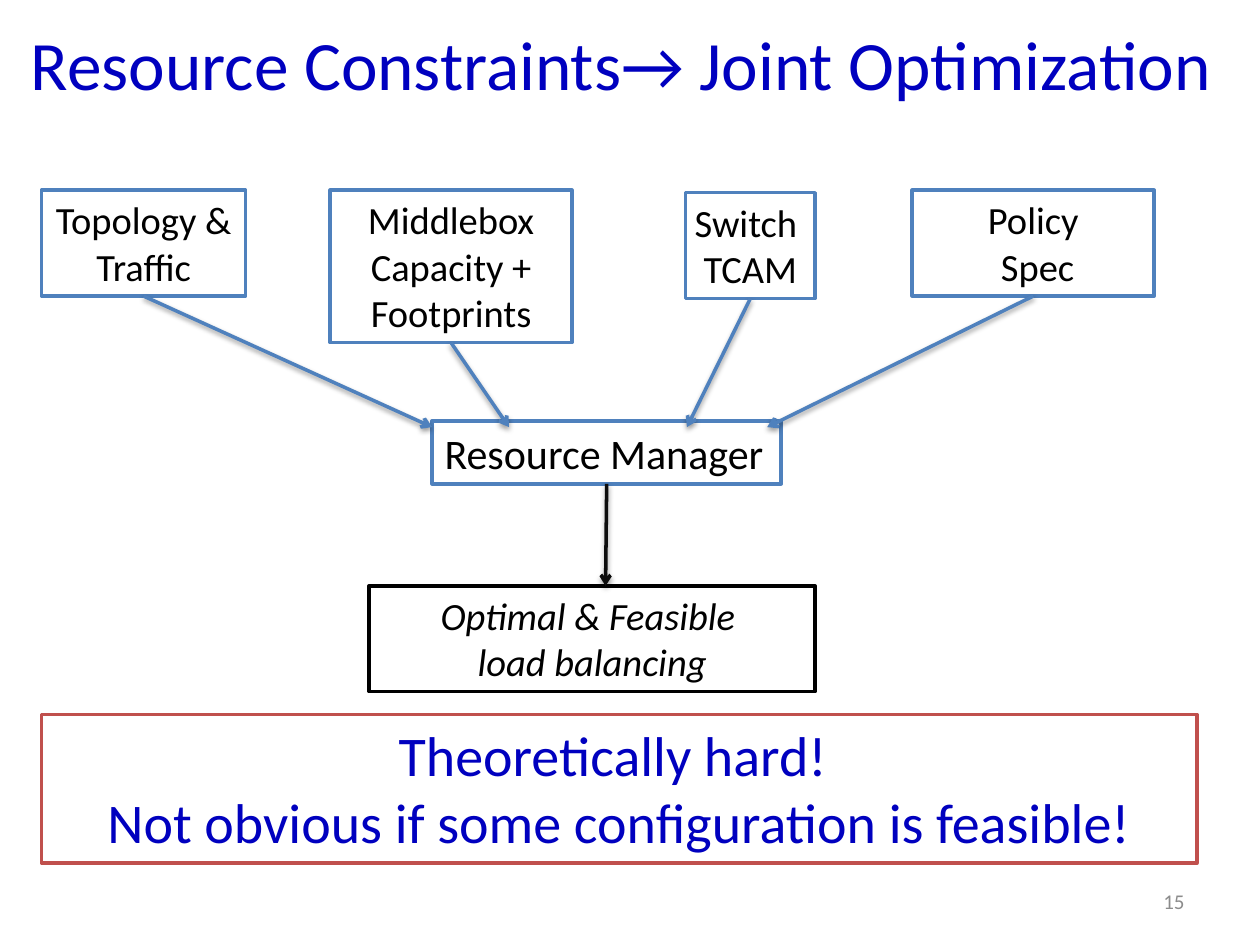
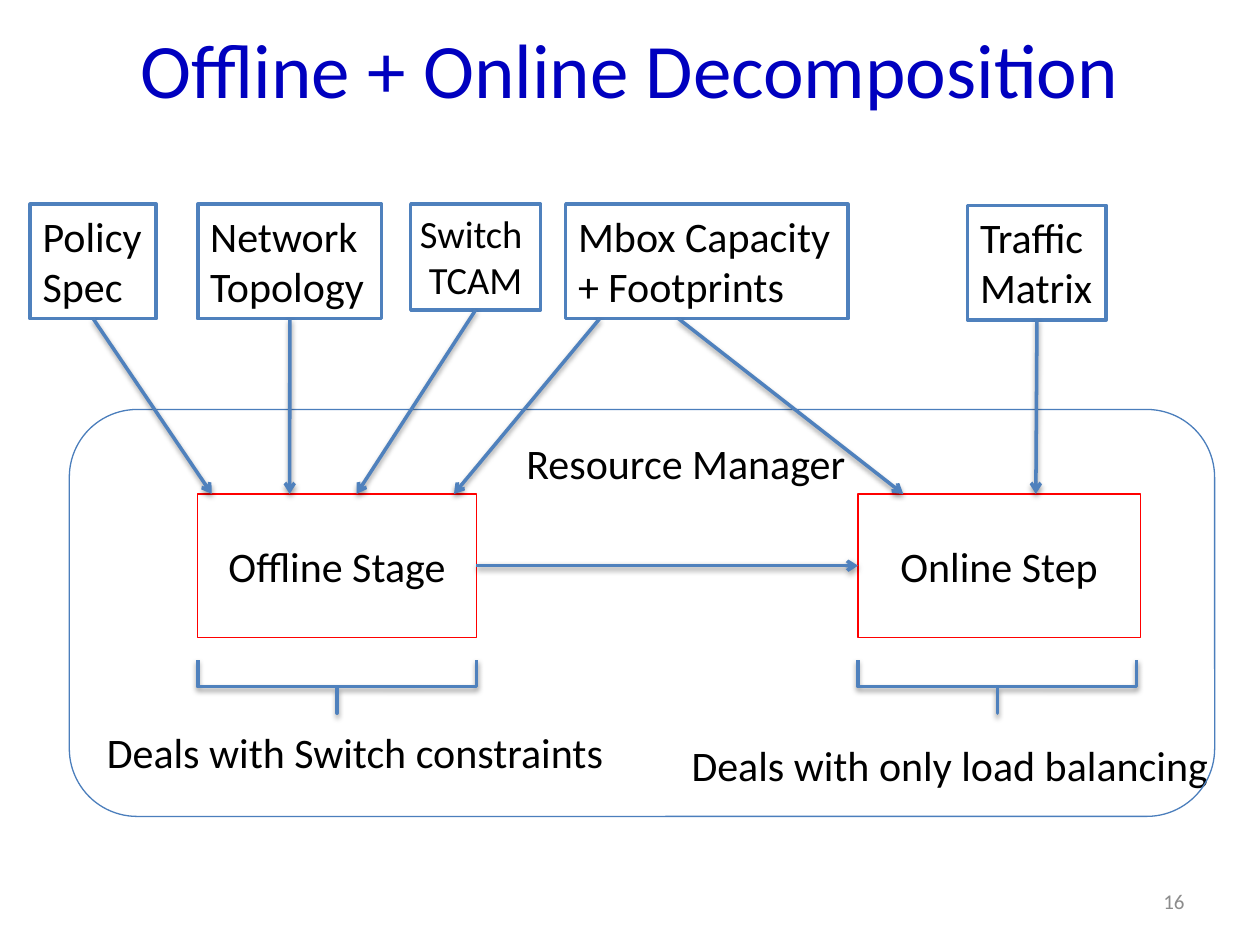
from lxml import etree
from pptx import Presentation
from pptx.dml.color import RGBColor
from pptx.enum import shapes, text
from pptx.oxml import ns
from pptx.util import Inches, Pt

COLORS = {
    "title": "0000BF", "blue": "4F81BD", "frame": "4B7EBC", "red": "FF0000",
    "brick": "C0504D", "black": "000000", "arrow": "0D0D0D", "white": "FFFFFF",
    "number": "8C8C8C",
}
FONT = "Calibri"
LEFT, CENTER, RIGHT = text.PP_ALIGN.LEFT, text.PP_ALIGN.CENTER, text.PP_ALIGN.RIGHT
TOP, MIDDLE = text.MSO_ANCHOR.TOP, text.MSO_ANCHOR.MIDDLE
SHAPE = shapes.MSO_SHAPE
BOTTOM_SITE, LEFT_SITE, RIGHT_SITE = 2, 1, 3


def color(name):
    """Return the named palette colour."""
    return RGBColor.from_string(COLORS[name])


def write(shape, content, size=24, ink="black", align=LEFT, anchor=TOP, italic=False, wrap=True):
    """Fill a shape with formatted text, one paragraph per line."""
    frame = shape.text_frame
    frame.text = content
    frame.word_wrap = wrap
    frame.vertical_anchor = anchor
    for paragraph in frame.paragraphs:
        paragraph.alignment = align
        font = paragraph.font
        for run in paragraph.runs:
            font = run.font
            font.name, font.size, font.italic = FONT, Pt(size), italic
            font.color.rgb = color(ink)


def add_outline(slide, box, kind=SHAPE.RECTANGLE, line="blue", weight=2, fill=None):
    """Add a preset shape with an outline and an optional fill."""
    shape = slide.shapes.add_shape(kind, *map(Inches, box))
    shape.shadow.inherit = False
    shape.line.color.rgb = color(line)
    shape.line.width = Pt(weight)
    if fill:
        shape.fill.solid()
        shape.fill.fore_color.rgb = color(fill)
    else:
        shape.fill.background()
    return shape


def add_box(slide, box, content, line="blue", **text_format):
    """Add a white outlined box with text."""
    shape = add_outline(slide, box, line=line, fill="white")
    write(shape, content, **text_format)
    return shape


def add_label(slide, box, content, **text_format):
    """Add free-standing text."""
    write(slide.shapes.add_textbox(*map(Inches, box)), content, **text_format)


def add_shadow(shape):
    """Give a line or brace a soft shadow that falls straight down."""
    properties = shape._element.spPr
    for effects in properties.findall(ns.qn("a:effectLst")):
        properties.remove(effects)
    effects = etree.SubElement(properties, ns.qn("a:effectLst"))
    shadow = etree.SubElement(effects, ns.qn("a:outerShdw"), blurRad=str(Pt(3.1)),
                              dist=str(Pt(1.6)), dir="5400000", rotWithShape="0")
    shade = etree.SubElement(shadow, ns.qn("a:srgbClr"), val=COLORS["black"])
    etree.SubElement(shade, ns.qn("a:alpha"), val="38000")


def point_on(shape, across, down=0):
    """Return the point at the given fractions of a shape's width and height."""
    return (shape.left + round(shape.width * across),
            shape.top + round(shape.height * down))


def add_arrow(slide, start, end, source=None, source_site=BOTTOM_SITE,
              target=None, target_site=LEFT_SITE, line="blue"):
    """Draw an arrow between two points, joined to source and target when given."""
    arrow = slide.shapes.add_connector(shapes.MSO_CONNECTOR.STRAIGHT, *start, *end)
    if source is not None:
        arrow.begin_connect(source, source_site)
    if target is not None:
        arrow.end_connect(target, target_site)
    arrow.line.color.rgb = color(line)
    arrow.line.width = Pt(2)
    etree.SubElement(arrow.line._get_or_add_ln(), ns.qn("a:tailEnd"), type="arrow")
    add_shadow(arrow)


def add_arrow_below(slide, source, end, **options):
    """Draw an arrow from the middle of a box's bottom side."""
    add_arrow(slide, point_on(source, 0.5, 1), end, source=source, **options)


def start_slide(presentation, title, box, size, number):
    """Add a titled slide with its page number."""
    slide = presentation.slides.add_slide(presentation.slide_layouts[5])
    heading = slide.shapes.title
    heading.left, heading.top, heading.width, heading.height = map(Inches, box)
    write(heading, title, size=size, ink="title", align=CENTER, anchor=MIDDLE)
    add_label(slide, (7.17, 6.95, 2.33, 0.4), str(number), size=12, ink="number",
              align=RIGHT, anchor=MIDDLE)
    return slide


def add_inputs(slide, top, inputs):
    """Place a row of input boxes, each given as left, drop, width, height, text and format."""
    return [add_box(slide, (left, top + drop, width, height), content, **text_format)
            for left, drop, width, height, content, text_format in inputs]


def add_stage(slide, box, content, note, note_box):
    """Place a stage with a brace below it and a note under the brace."""
    left, top, width, height = box
    stage = add_outline(slide, box, line="red", weight=0.75)
    write(stage, content, align=CENTER, anchor=MIDDLE)
    depth, span = 0.42, 2.21
    brace = add_outline(slide, (left + (span - depth) / 2, top + height + 0.39 - span / 2,
                                depth, span), SHAPE.RIGHT_BRACE)
    brace.adjustments[0] = 0
    brace.rotation = 90
    add_shadow(brace)
    add_label(slide, note_box, note)
    return stage


def build_constraints(presentation):
    """Build the slide on joint optimization under resource constraints."""
    slide = start_slide(presentation, "Resource Constraints→ Joint Optimization",
                        (0, 0, 9.86, 1), 39.6, 15)
    manager = add_box(slide, (3.43, 3.34, 2.77, 0.5), "Resource Manager", wrap=False)
    centered = {"size": 22, "align": CENTER}
    inputs = add_inputs(slide, 1.51, [
        (0.33, 0, 1.62, 0.84, "Topology & Traffic", centered),
        (2.62, 0, 1.92, 1.21, "Middlebox\nCapacity + Footprints", centered),
        (5.44, 0.02, 1.03, 0.84, "Switch \nTCAM", {**centered, "wrap": False}),
        (7.24, 0, 1.92, 0.84, "Policy\n Spec", centered),
    ])
    for source, across in zip(inputs, (0, 0.22, 0.73, 0.96)):
        add_arrow_below(slide, source, point_on(manager, across, 0.1))
    result = add_box(slide, (2.93, 4.65, 3.54, 0.84), "Optimal & Feasible \nload balancing",
                     line="black", italic=True, **centered)
    add_arrow_below(slide, manager, point_on(result, 0.53), line="arrow")
    add_box(slide, (0.33, 5.67, 9.17, 1.18),
            "Theoretically hard! \nNot obvious if some configuration is feasible!",
            line="brick", size=32, ink="title", align=CENTER)


def build_decomposition(presentation):
    """Build the slide that splits the manager into two stages."""
    slide = start_slide(presentation, "Offline + Online Decomposition",
                        (0.5, 0.06, 9, 0.96), 44, 16)
    offline = add_stage(slide, (1.57, 3.92, 2.21, 1.14), "Offline Stage",
                        "Deals with Switch constraints", (0.75, 5.72, 4.56, 0.5))
    online = add_stage(slide, (6.81, 3.92, 2.24, 1.14), "Online Step",
                       "Deals with only load balancing", (5.39, 5.82, 5.07, 0.5))
    add_arrow(slide, point_on(offline, 1, 0.5), point_on(online, 0, 0.5),
              source=offline, source_site=RIGHT_SITE, target=online)
    add_outline(slide, (0.55, 3.25, 9.09, 3.23), SHAPE.ROUNDED_RECTANGLE, "frame", 0.75)
    add_label(slide, (4.08, 3.42, 3.15, 0.5), "Resource Manager")
    plain = {"wrap": False}
    policy, topology, switch, middlebox, traffic = add_inputs(slide, 1.62, [
        (0.24, 0, 1, 0.91, "Policy\nSpec", plain),
        (1.57, 0, 1.46, 0.91, "Network\nTopology", plain),
        (3.26, 0, 1.03, 0.84, "Switch \nTCAM", {"size": 22, "align": CENTER, "wrap": False}),
        (4.49, 0, 2.24, 0.91, "Mbox Capacity\n+ Footprints", plain),
        (7.68, 0.01, 1.1, 0.91, "Traffic\nMatrix", plain),
    ])
    for source, stage, across in ((policy, offline, 0.05), (topology, offline, 0.33),
                                  (switch, offline, 0.57), (traffic, online, 0.63)):
        add_arrow_below(slide, source, point_on(stage, across))
    for start, stage, across in ((0.12, offline, 0.92), (0.4, online, 0.16)):
        add_arrow(slide, point_on(middlebox, start, 1), point_on(stage, across))


def main():
    """Build and save the presentation."""
    presentation = Presentation()
    presentation.slide_width, presentation.slide_height = Inches(10), Inches(7.5)
    build_constraints(presentation)
    build_decomposition(presentation)
    presentation.save("out.pptx")


if __name__ == "__main__":
    main()
